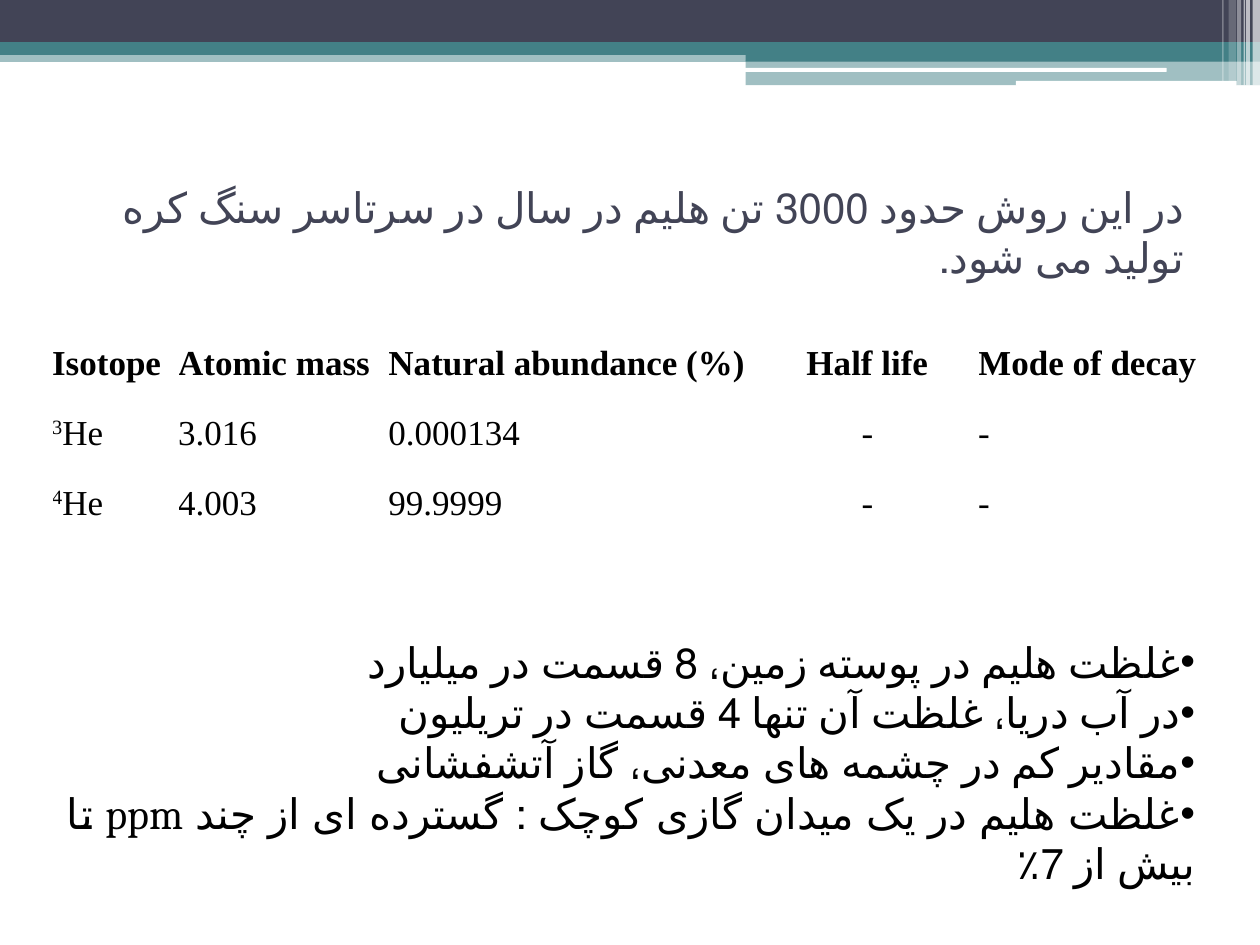
from lxml.etree import SubElement
from pptx import Presentation
from pptx.dml.color import RGBColor
from pptx.enum.lang import MSO_LANGUAGE_ID
from pptx.enum.shapes import MSO_SHAPE
from pptx.enum.text import MSO_ANCHOR, MSO_AUTO_SIZE, PP_ALIGN
from pptx.oxml.ns import qn
from pptx.util import Cm, Pt

NAVY, TEAL, WHITE, BLACK = "424456", "438086", "FFFFFF", "000000"
WIDE = 25.4

# left, top, width, height, colour, opacity in percent
BARS = [
    (0, 1.02, WIDE, 0.23, TEAL, 50),
    (0, 0, WIDE, 0.86, NAVY, 100),
    (0, 0.85, WIDE, 0.26, TEAL, 100),
    (15.03, 0.99, 10.37, 0.25, TEAL, 100),
    (15.03, 1.22, 10.37, 0.5, TEAL, 50),
]
LINES = [(15.01, 1.37, 8.51, 0.08), (20.48, 1.63, 4.45, 0.1)]
# left, width, height, opacity in percent
STRIPES = [
    (25.25, 0.15, 1.73, 65),
    (25.12, 0.08, 1.73, 65),
    (25.07, 0.03, 1.73, 60),
    (24.94, 0.08, 1.73, 40),
    (24.77, 0.15, 1.63, 20),
    (24.64, 0.03, 1.63, 30),
]

TITLE = "در این روش حدود 3000 تن هلیم در سال در سرتاسر سنگ کره تولید می شود."
COLS = [2.54, 4.24, 7.42, 4.47, 5.05]
ROWS = [
    ["Isotope", "Atomic mass", "Natural abundance (%)", "Half life", "Mode of decay"],
    [("3", "He"), "3.016", "0.000134", "-", "-"],
    [("4", "He"), "4.003", "99.9999", "-", "-"],
]
POINTS = [
    "غلظت هلیم در پوسته زمین، 8 قسمت در میلیارد",
    "در آب دریا، غلظت آن تنها 4 قسمت در تریلیون",
    "مقادیر کم در چشمه های معدنی، گاز آتشفشانی",
    "غلظت هلیم در یک میدان گازی کوچک : گسترده ای از چند ppm تا بیش از 7٪",
]


def rgb(code):
    return RGBColor.from_string(code)


class Page:
    def __init__(self, slide):
        self.slide = slide
        self.shapes = slide.shapes
        self.size = 24

    def bar(self, left, top, width, height, color, alpha=100, kind=MSO_SHAPE.RECTANGLE):
        bar = self.shapes.add_shape(kind, Cm(left), Cm(top), Cm(width), Cm(height))
        bar.shadow.inherit = False
        bar.line.fill.background()
        bar.fill.solid()
        bar.fill.fore_color.rgb = rgb(color)
        if alpha < 100:
            tint = bar.fill._xPr.find(".//" + qn("a:srgbClr"))
            SubElement(tint, qn("a:alpha"), val=str(alpha * 1000))

    def run(self, para, text, font, color, size, bold=False):
        run = para.add_run()
        run.text = text
        run.font.name, run.font.size, run.font.bold = font, Pt(size), bold
        run.font.color.rgb = rgb(color)
        return run

    def farsi(self, para, text, font, color):
        run = self.run(para, text, font, color, self.size)
        run.font.language_id = MSO_LANGUAGE_ID.FARSI

    def flow(self, para, align):
        """Set a paragraph to run from right to left."""
        para.alignment = align
        para._p.get_or_add_pPr().set("rtl", "1")

    def title(self, text, left, top, width, height):
        box = self.shapes.title
        box.left, box.top, box.width, box.height = Cm(left), Cm(top), Cm(width), Cm(height)
        self.shapes._spTree.append(box._element)
        frame = box.text_frame
        frame.auto_size = MSO_AUTO_SIZE.NONE
        frame.vertical_anchor = MSO_ANCHOR.MIDDLE
        para = frame.paragraphs[0]
        self.flow(para, PP_ALIGN.RIGHT)
        self.farsi(para, text, "Cabin", NAVY)

    def cell(self, cell, text, bold, align):
        cell.fill.background()
        cell.vertical_anchor = MSO_ANCHOR.MIDDLE
        cell.margin_left = cell.margin_right = cell.margin_top = cell.margin_bottom = 0
        para = cell.text_frame.paragraphs[0]
        para.alignment, para.line_spacing = align, 1.15
        mass, name = text if isinstance(text, tuple) else ("", text)
        if mass:
            run = self.run(para, mass, "Times New Roman", BLACK, 20, bold)
            run._r.get_or_add_rPr().set("baseline", "30000")
        self.run(para, name, "Times New Roman", BLACK, 20, bold)

    def table(self, rows, cols, left, top, height):
        frame = self.shapes.add_table(len(rows), len(cols), Cm(left), Cm(top),
                                      Cm(sum(cols)), Cm(height * len(rows)))
        table = frame.table
        table.first_row = table.horz_banding = False
        for col, width in zip(table.columns, cols):
            col.width = Cm(width)
        for i, row in enumerate(rows):
            table.rows[i].height = Cm(height)
            for j, text in enumerate(row):
                align = PP_ALIGN.CENTER if j == 3 else PP_ALIGN.LEFT
                self.cell(table.cell(i, j), text, i == 0, align)

    def bullets(self, points, left, top, width, height):
        box = self.shapes.add_textbox(Cm(left), Cm(top), Cm(width), Cm(height))
        frame = box.text_frame
        frame.word_wrap = True
        frame.auto_size = MSO_AUTO_SIZE.SHAPE_TO_FIT_TEXT
        for i, text in enumerate(points):
            para = frame.add_paragraph() if i else frame.paragraphs[0]
            self.flow(para, PP_ALIGN.JUSTIFY)
            props = para._p.get_or_add_pPr()
            SubElement(props, qn("a:buFont"), typeface="Arial")
            SubElement(props, qn("a:buChar"), char="•")
            self.farsi(para, text, "Cambria", BLACK)


def main():
    deck = Presentation()
    deck.slide_width, deck.slide_height = Cm(WIDE), Cm(19.05)
    page = Page(deck.slides.add_slide(deck.slide_layouts[5]))
    for bar in BARS:
        page.bar(*bar)
    for line in LINES:
        page.bar(*line, WHITE, kind=MSO_SHAPE.ROUNDED_RECTANGLE)
    for left, width, height, alpha in STRIPES:
        page.bar(left, 0, width, height, WHITE, alpha)
    page.title(TITLE, 1.27, 3.18, 22.86, 2.97)
    page.table(ROWS, COLS, 1.05, 6.56, 1.41)
    page.bullets(POINTS, 1.06, 12.7, 23.28, 4.37)
    deck.save("out.pptx")


if __name__ == "__main__":
    main()
